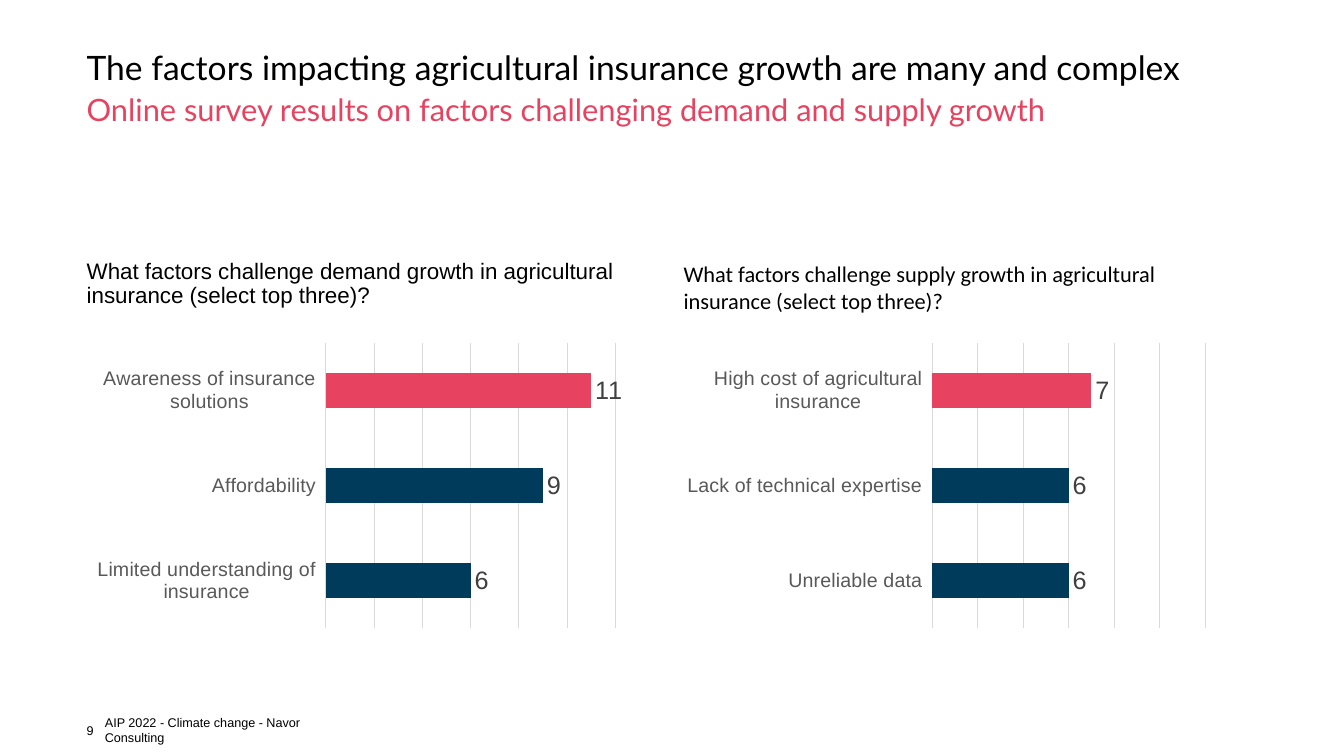
from pptx import Presentation
from pptx.chart.data import CategoryChartData
from pptx.dml.color import RGBColor
from pptx.enum.chart import XL_CHART_TYPE, XL_LABEL_POSITION, XL_TICK_LABEL_POSITION, XL_TICK_MARK
from pptx.enum.text import MSO_ANCHOR
from pptx.util import Inches, Pt

BLACK = RGBColor(0x00, 0x00, 0x00)
RED = RGBColor(0xE7, 0x43, 0x60)
NAVY = RGBColor(0x00, 0x3B, 0x5C)
GRID = RGBColor(0xD9, 0xD9, 0xD9)
GRAY = RGBColor(0x59, 0x59, 0x59)
DARK = RGBColor(0x40, 0x40, 0x40)

prs = Presentation()
prs.slide_width, prs.slide_height = Inches(13.33), Inches(7.5)
s = prs.slides.add_slide(prs.slide_layouts[6])


def add_text(text, x, y, w, h, size=16, font="Arial", color=BLACK,
             anchor=MSO_ANCHOR.TOP, spacing=1.0, wrap=True):
    tf = s.shapes.add_textbox(Inches(x), Inches(y), Inches(w), Inches(h)).text_frame
    tf.margin_left = tf.margin_right = tf.margin_top = tf.margin_bottom = 0
    tf.word_wrap = wrap
    tf.vertical_anchor = anchor
    p = tf.paragraphs[0]
    p.line_spacing = spacing
    r = p.add_run()
    r.text = text
    r.font.size, r.font.name, r.font.color.rgb = Pt(size), font, color


def format_font(font, size, color):
    font.size, font.name, font.color.rgb = Pt(size), "Arial", color


# Title and subtitle
add_text("The factors impacting agricultural insurance growth are many and complex",
         0.86, 0.44, 11.71, 0.43, size=24, font="Lato", anchor=MSO_ANCHOR.BOTTOM, spacing=0.9)
add_text("Online survey results on factors challenging demand and supply growth",
         0.86, 0.94, 11.71, 0.43, size=22, font="Lato", color=RED, spacing=0.9)

# Survey questions
add_text("What factors challenge demand growth in agricultural insurance (select top three)?",
         0.86, 2.58, 5.51, 0.7, spacing=0.9)
add_text("What factors challenge supply growth in agricultural insurance (select top three)?",
         6.78, 2.58, 5.51, 0.7, font="Calibri")

# Footer
add_text("9", 0.86, 7.17, 0.17, 0.15, size=9, wrap=False)
add_text("AIP 2022 - Climate change - Navor Consulting", 1.04, 7.17, 2.01, 0.15,
         size=9, anchor=MSO_ANCHOR.MIDDLE, wrap=False)

# Bar charts: left edge and answers from bottom to top
surveys = [
    (0.86, {"Limited understanding of insurance": 6, "Affordability": 9,
            "Awareness of insurance solutions": 11}),
    (6.71, {"Unreliable data": 6, "Lack of technical expertise": 6,
            "High cost of agricultural insurance": 7}),
]
for x, answers in surveys:
    data = CategoryChartData()
    data.categories = list(answers)
    data.add_series("Series 1", list(answers.values()))
    chart = s.shapes.add_chart(XL_CHART_TYPE.BAR_CLUSTERED, Inches(x), Inches(3.34),
                               Inches(5.35), Inches(2.95), data).chart
    chart.has_legend = chart.has_title = False
    format_font(chart.font, 10, BLACK)

    cat = chart.category_axis
    cat.major_tick_mark = cat.minor_tick_mark = XL_TICK_MARK.NONE
    cat.tick_label_position = XL_TICK_LABEL_POSITION.LOW
    cat.format.line.color.rgb, cat.format.line.width = GRID, Pt(0.75)
    format_font(cat.tick_labels.font, 14, GRAY)

    val = chart.value_axis
    val.visible = False
    val.minimum_scale, val.maximum_scale, val.major_unit = 0, 12, 2
    val.has_major_gridlines = True
    grid = val.major_gridlines.format.line
    grid.color.rgb, grid.width = GRID, Pt(0.75)

    plot = chart.plots[0]
    plot.gap_width, plot.overlap, plot.vary_by_categories = 173, -32, False
    plot.has_data_labels = True
    labels = plot.data_labels
    labels.show_value = True
    labels.position = XL_LABEL_POSITION.OUTSIDE_END
    format_font(labels.font, 18, DARK)

    # Top answer stands out in red
    bars = plot.series[0]
    for fill, color in ((bars.format.fill, NAVY), (bars.points[2].format.fill, RED)):
        fill.solid()
        fill.fore_color.rgb = color

prs.save("out.pptx")
